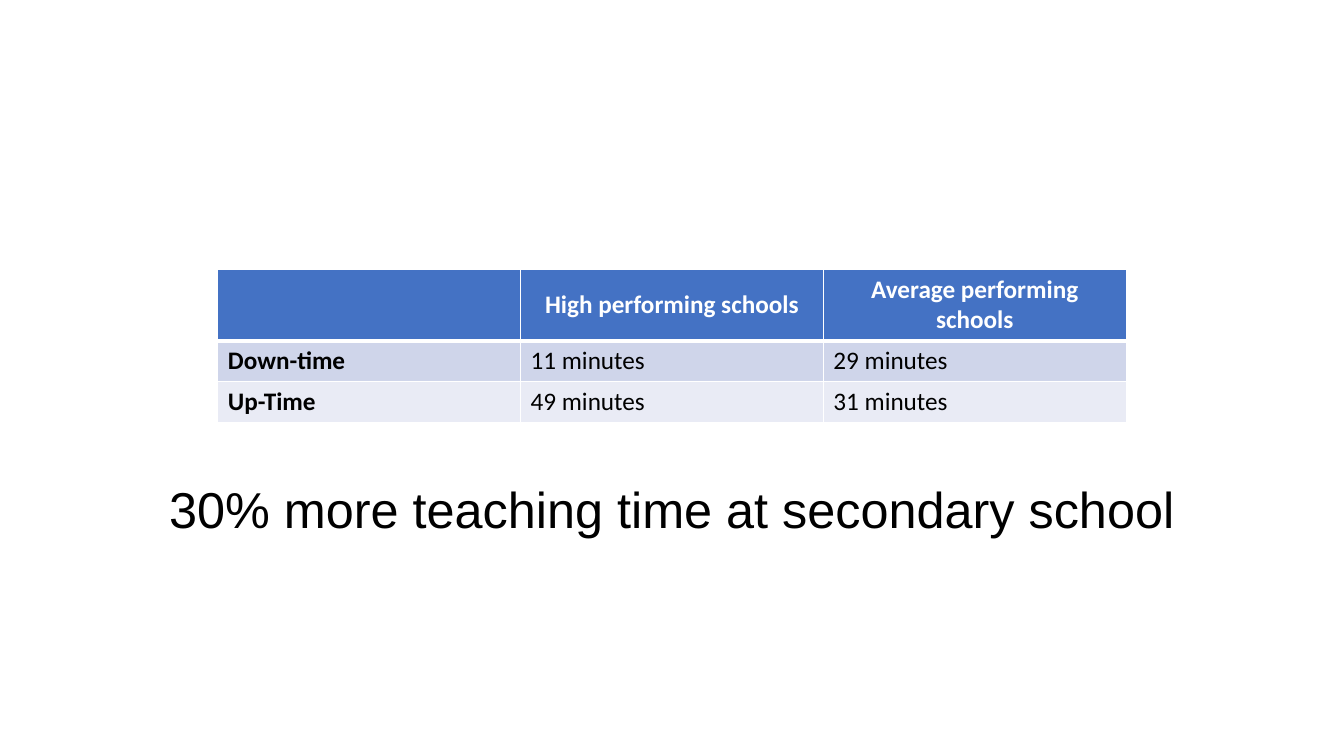
from dataclasses import dataclass

from lxml import etree
from pptx import Presentation
from pptx.dml.color import RGBColor
from pptx.enum import text
from pptx.oxml.ns import qn
from pptx.util import Cm, Pt

LESSON_TIMES = [
    ("", "High performing schools", "Average performing schools"),
    ("Down-time", "11 minutes", "29 minutes"),
    ("Up-Time", "49 minutes", "31 minutes"),
]
CONCLUSION = "30% more teaching time at secondary school"


@dataclass(frozen=True)
class Theme:
    header: str = "4472C4"
    bands: tuple = ("CFD5EA", "E9EBF5")
    light: str = "FFFFFF"
    dark: str = "000000"
    table_font: str = "Calibri"
    conclusion_font: str = "Arial"
    table_size: int = 18
    conclusion_size: int = 36
    border: int = 1
    header_rule: int = 3


THEME = Theme()
TABLE_LEFT, TABLE_TOP = Cm(5.49), Cm(6.78)
COLUMN_WIDTH = Cm(7.63)
HEADER_HEIGHT, ROW_HEIGHT = Cm(1.81), Cm(1.03)


def add_run(paragraph, wording, font, size, color, bold=False):
    run = paragraph.add_run()
    run.text = wording
    run.font.name = font
    run.font.size = Pt(size)
    run.font.bold = bold
    run.font.color.rgb = RGBColor.from_string(color)


def set_borders(cell, top, bottom):
    """Draw all four cell edges; top and bottom are widths in points."""
    properties = cell._tc.get_or_add_tcPr()
    edges = {"L": THEME.border, "R": THEME.border, "T": top, "B": bottom}
    for side, width in edges.items():
        line = etree.SubElement(properties, qn(f"a:ln{side}"), w=str(Pt(width)))
        fill = etree.SubElement(line, qn("a:solidFill"))
        etree.SubElement(fill, qn("a:srgbClr"), val=THEME.light)


def format_cell(cell, wording, row, column):
    is_header = row == 0
    set_borders(
        cell,
        top=THEME.header_rule if row == 1 else THEME.border,
        bottom=THEME.header_rule if is_header else THEME.border,
    )
    background = THEME.header if is_header else THEME.bands[(row - 1) % 2]
    cell.fill.solid()
    cell.fill.fore_color.rgb = RGBColor.from_string(background)
    paragraph = cell.text_frame.paragraphs[0]
    if is_header:
        cell.vertical_anchor = text.MSO_ANCHOR.MIDDLE
        paragraph.alignment = text.PP_ALIGN.CENTER
    if wording:
        add_run(paragraph, wording, THEME.table_font, THEME.table_size,
                THEME.light if is_header else THEME.dark,
                bold=is_header or column == 0)


def add_lesson_table(slide):
    row_count, column_count = len(LESSON_TIMES), len(LESSON_TIMES[0])
    table = slide.shapes.add_table(
        row_count, column_count, TABLE_LEFT, TABLE_TOP,
        COLUMN_WIDTH * column_count,
        HEADER_HEIGHT + ROW_HEIGHT * (row_count - 1),
    ).table
    for column in table.columns:
        column.width = COLUMN_WIDTH
    for row, wordings in enumerate(LESSON_TIMES):
        table.rows[row].height = ROW_HEIGHT if row else HEADER_HEIGHT
        for column, wording in enumerate(wordings):
            format_cell(table.cell(row, column), wording, row, column)


def add_conclusion(slide):
    frame = slide.shapes.add_textbox(Cm(2.33), Cm(11.9), Cm(29.21), Cm(2)).text_frame
    frame.word_wrap = True
    frame.vertical_anchor = text.MSO_ANCHOR.MIDDLE
    paragraph = frame.paragraphs[0]
    paragraph.alignment = text.PP_ALIGN.CENTER
    paragraph.line_spacing = 0.9
    add_run(paragraph, CONCLUSION, THEME.conclusion_font,
            THEME.conclusion_size, THEME.dark)


def main():
    deck = Presentation()
    deck.slide_width, deck.slide_height = Cm(33.87), Cm(19.05)
    blank_layout = deck.slide_layouts[6]
    slide = deck.slides.add_slide(blank_layout)
    add_lesson_table(slide)
    add_conclusion(slide)
    deck.save("out.pptx")


if __name__ == "__main__":
    main()
